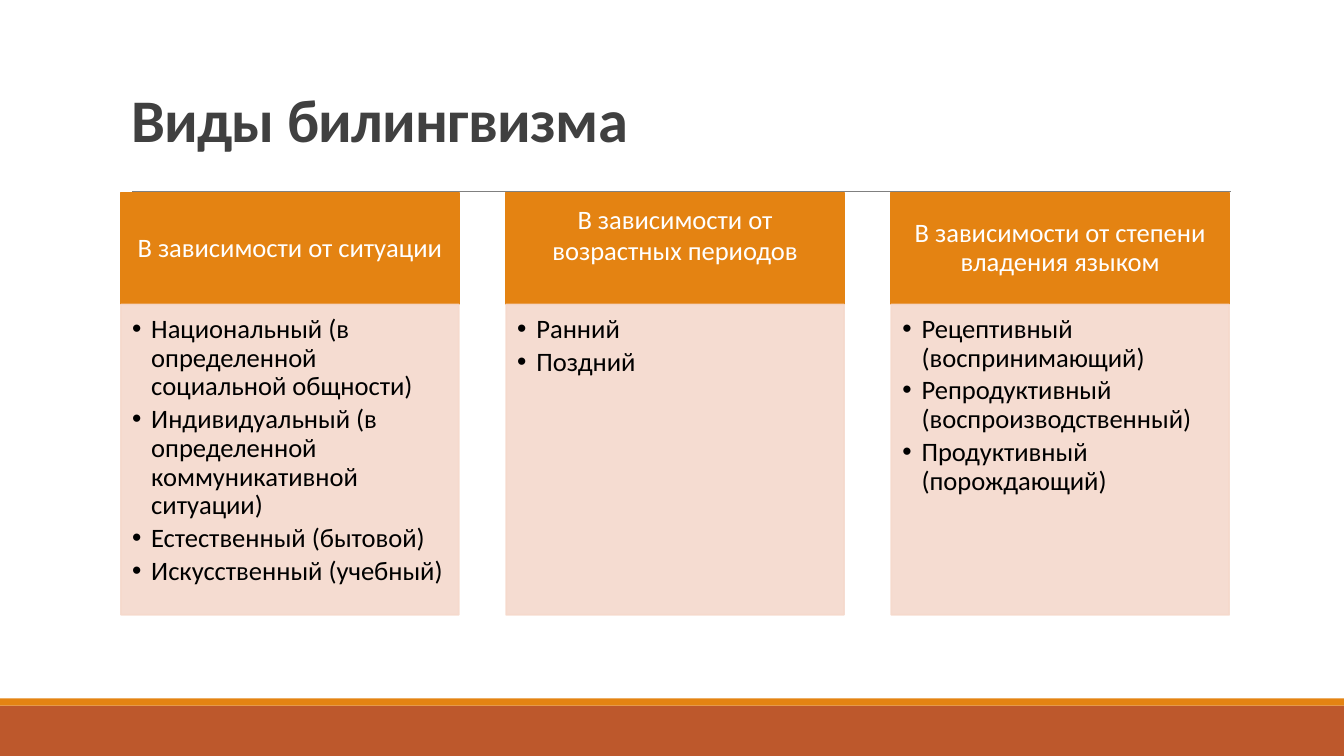
from dataclasses import dataclass

from lxml.etree import SubElement
from pptx import Presentation
from pptx.dml.color import RGBColor
from pptx.enum.shapes import MSO_CONNECTOR as Connector
from pptx.enum.shapes import MSO_SHAPE as Shape
from pptx.enum.text import MSO_ANCHOR as Anchor
from pptx.enum.text import MSO_AUTO_SIZE as AutoSize
from pptx.enum.text import PP_ALIGN as Align
from pptx.oxml.ns import qn
from pptx.util import Inches, Pt

ORANGE = RGBColor(0xE4, 0x83, 0x12)
RUST = RGBColor(0xBD, 0x58, 0x2C)
PEACH = RGBColor(0xF5, 0xD9, 0xCC)
GREY = RGBColor(0x80, 0x80, 0x80)
DARK = RGBColor(0x40, 0x40, 0x40)
WHITE = RGBColor(0xFF, 0xFF, 0xFF)
BLACK = RGBColor(0, 0, 0)

FONT = "Calibri"
TEXT_SIZE = 19
LEFT, STEP, WIDTH = 1.2, 3.82, 3.35
HEADER_TOP, HEADER_HEIGHT, BODY_HEIGHT = 1.91, 1.11, 3.08


@dataclass(frozen=True)
class Category:
    heading: str
    kinds: tuple[str, ...]
    line_spacing: float = 0.9
    bottom_inset: float = 0.08


CATEGORIES = (
    Category("В зависимости от ситуации", (
        "Национальный (в определенной социальной общности)",
        "Индивидуальный (в определенной коммуникативной ситуации)",
        "Естественный (бытовой)",
        "Искусственный (учебный)",
    )),
    Category("В зависимости от возрастных периодов", ("Ранний", "Поздний"), 1.0, 0.36),
    Category("В зависимости от степени владения языком", (
        "Рецептивный (воспринимающий)",
        "Репродуктивный (воспроизводственный)",
        "Продуктивный (порождающий)",
    )),
)


def add_block(slide, left: float, top: float, width: float, height: float, color: RGBColor):
    block = slide.shapes.add_shape(
        Shape.RECTANGLE, Inches(left), Inches(top), Inches(width), Inches(height))
    block.shadow.inherit = False
    block.fill.solid()
    block.fill.fore_color.rgb = color
    block.line.fill.background()
    return block


def outline(block, color: RGBColor) -> None:
    block.line.color.rgb = color
    block.line.width = Pt(1.25)


def set_insets(frame, left: float, top: float, right: float, bottom: float) -> None:
    frame.word_wrap = True
    frame.margin_left, frame.margin_top = Inches(left), Inches(top)
    frame.margin_right, frame.margin_bottom = Inches(right), Inches(bottom)


def format_runs(paragraph, size: float, color: RGBColor, bold: bool = False) -> None:
    for run in paragraph.runs:
        run.font.name = FONT
        run.font.size = Pt(size)
        run.font.bold = bold
        run.font.color.rgb = color


def add_bullet(paragraph) -> None:
    properties = paragraph._p.get_or_add_pPr()
    properties.set("marL", str(Inches(0.19)))
    properties.set("indent", str(Inches(-0.19)))
    SubElement(properties, qn("a:buFont"), typeface="Arial")
    SubElement(properties, qn("a:buChar"), char="•")


def add_header(slide, left: float, category: Category) -> None:
    header = add_block(slide, left, HEADER_TOP, WIDTH, HEADER_HEIGHT, ORANGE)
    outline(header, ORANGE)
    frame = header.text_frame
    frame.text = category.heading
    frame.vertical_anchor = Anchor.MIDDLE
    set_insets(frame, 0.15, 0.08, 0.15, category.bottom_inset)
    heading = frame.paragraphs[0]
    heading.alignment = Align.CENTER
    heading.line_spacing = category.line_spacing
    format_runs(heading, TEXT_SIZE, WHITE)


def add_body(slide, left: float, category: Category) -> None:
    body = add_block(slide, left, HEADER_TOP + HEADER_HEIGHT, WIDTH, BODY_HEIGHT, PEACH)
    outline(body, PEACH)
    for color in body._element.spPr.iter(qn("a:srgbClr")):
        SubElement(color, qn("a:alpha"), val="90000")
    frame = body.text_frame
    frame.text = "\n".join(category.kinds)
    frame.vertical_anchor = Anchor.TOP
    set_insets(frame, 0.11, 0.11, 0.15, 0.17)
    for kind in frame.paragraphs:
        kind.alignment = Align.LEFT
        kind.line_spacing = 0.9
        kind.space_after = Pt(0.15 * TEXT_SIZE)
        add_bullet(kind)
        format_runs(kind, TEXT_SIZE, BLACK)


def add_title(slide, text: str) -> None:
    title = slide.shapes.title
    title.left, title.top = Inches(LEFT), Inches(0.85)
    title.width, title.height = Inches(11), Inches(0.74)
    frame = title.text_frame
    frame.text = text
    frame.auto_size = AutoSize.NONE
    frame.vertical_anchor = Anchor.BOTTOM
    heading = frame.paragraphs[0]
    heading.alignment = Align.LEFT
    heading.line_spacing = 0.85
    format_runs(heading, 43.2, DARK, bold=True)
    heading.runs[0].font._element.set("spc", "-50")


def add_rule(slide) -> None:
    rule = slide.shapes.add_connector(
        Connector.STRAIGHT, Inches(1.31), Inches(1.9), Inches(12.21), Inches(1.9))
    rule.line.color.rgb = GREY
    rule.line.width = Pt(0.5)
    SubElement(rule._element.spPr, qn("a:effectLst"))


def main() -> None:
    deck = Presentation()
    deck.slide_width, deck.slide_height = Inches(13.33), Inches(7.5)
    slide = deck.slides.add_slide(deck.slide_layouts[5])
    add_block(slide, 0, 7, 13.33, 0.5, RUST)
    add_block(slide, 0, 6.93, 13.33, 0.07, ORANGE)
    add_rule(slide)
    add_title(slide, "Виды билингвизма")
    for column, category in enumerate(CATEGORIES):
        left = LEFT + column * STEP
        add_header(slide, left, category)
        add_body(slide, left, category)
    deck.save("out.pptx")


if __name__ == "__main__":
    main()
